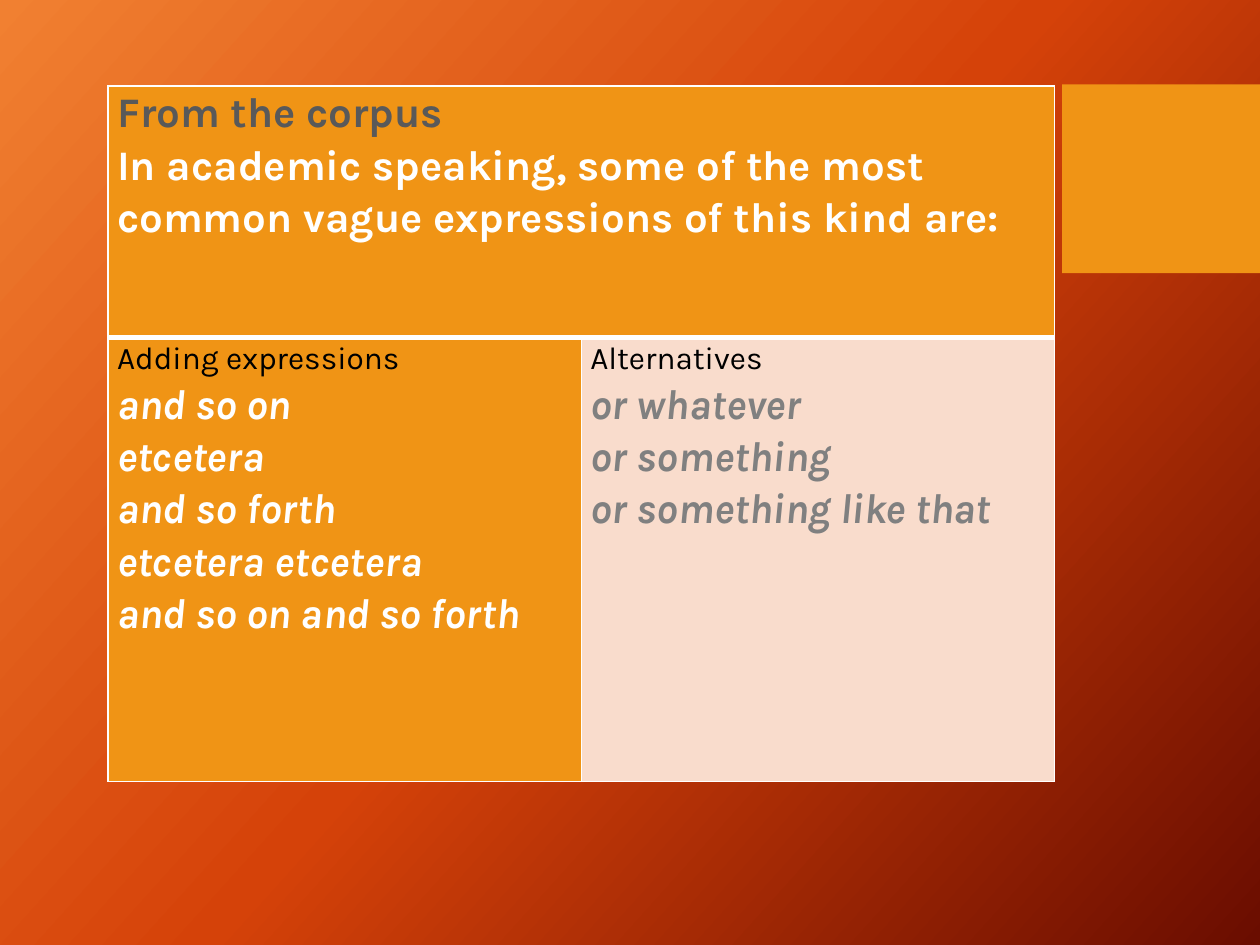
import copy
from dataclasses import dataclass

import pptx
import pptx.dml.color
import pptx.enum.shapes
import pptx.oxml
import pptx.oxml.ns
import pptx.slide
import pptx.table
import pptx.util
from pptx.util import Cm

COLORS = {
    "amber": "F09415",
    "peach": "F9DCCC",
    "white": "FFFFFF",
    "black": "000000",
    "heading": "595959",
    "muted": "808080",
}
GRADIENT = [(0, "F18031"), (0.5, "D54209"), (1, "6A0D00")]
FONT = "Karla"
THIN, THICK = 1, 3


@dataclass
class Line:
    text: str
    color: str
    size: int = 24
    bold: bool = True
    italic: bool = False


@dataclass
class Panel:
    row: int
    column: int
    fill: str
    lines: list[Line]


def expressions(label: str, color: str, phrases: list[str]) -> list[Line]:
    """A plain label followed by its example phrases."""
    examples = [Line(phrase, color, italic=True) for phrase in phrases]
    return [Line(label, "black", size=18, bold=False)] + examples


PANELS = [
    Panel(0, 0, "amber", [
        Line("From the corpus", "heading"),
        Line("In academic speaking, some of the most common vague "
             "expressions of this kind are:", "white"),
    ]),
    Panel(1, 0, "amber", expressions("Adding expressions", "white", [
        "and so on", "etcetera", "and so forth", "etcetera etcetera",
        "and so on and so forth"])),
    Panel(1, 1, "peach", expressions("Alternatives", "muted", [
        "or whatever", "or something", "or something like that"])),
]


def rgb(value: str) -> pptx.dml.color.RGBColor:
    return pptx.dml.color.RGBColor.from_string(value)


def paint_background(page: pptx.slide.Slide) -> None:
    fill = page.background.fill
    fill.gradient()
    fill.gradient_angle = 318
    stop_list = next(page.element.iter(pptx.oxml.ns.qn("a:gsLst")))
    stop_list.insert(1, copy.deepcopy(stop_list[0]))
    for stop, (position, color) in zip(fill.gradient_stops, GRADIENT):
        stop.position = position
        stop.color.rgb = rgb(color)


def add_accent_block(page: pptx.slide.Slide) -> None:
    block = page.shapes.add_shape(
        pptx.enum.shapes.MSO_SHAPE.RECTANGLE,
        Cm(21.41), Cm(1.7), Cm(3.99), Cm(3.81))
    block.shadow.inherit = False
    block.fill.solid()
    block.fill.fore_color.rgb = rgb(COLORS["amber"])
    block.line.fill.background()


def set_borders(cell: pptx.table._Cell, top: int, bottom: int) -> None:
    widths = {"lnL": THIN, "lnR": THIN, "lnT": top, "lnB": bottom}
    properties = cell._tc.get_or_add_tcPr()
    for index, (side, width) in enumerate(widths.items()):
        properties.insert(index, pptx.oxml.parse_xml(
            f'<a:{side} {pptx.oxml.ns.nsdecls("a")} w="{pptx.util.Pt(width)}">'
            f'<a:solidFill><a:srgbClr val="{COLORS["white"]}"/></a:solidFill>'
            f'</a:{side}>'))


def write_lines(cell: pptx.table._Cell, lines: list[Line]) -> None:
    cell.margin_left = cell.margin_right = Cm(0.18)
    cell.margin_top = cell.margin_bottom = 0
    frame = cell.text_frame
    for index, line in enumerate(lines):
        para = frame.add_paragraph() if index else frame.paragraphs[0]
        para.line_spacing = 1.07
        span = para.add_run()
        span.text = line.text
        span.font.name = FONT
        span.font.size = pptx.util.Pt(line.size)
        span.font.bold = line.bold
        span.font.italic = line.italic
        span.font.color.rgb = rgb(COLORS[line.color])


def add_corpus_table(page: pptx.slide.Slide) -> None:
    table = page.shapes.add_table(
        2, 2, Cm(2.18), Cm(1.73), Cm(19.08), Cm(14.02)).table
    table.first_row = table.horz_banding = False
    table.rows[0].height, table.rows[1].height = Cm(5.08), Cm(8.94)
    table.cell(0, 0).merge(table.cell(0, 1))
    for panel in PANELS:
        cell = table.cell(panel.row, panel.column)
        cell.fill.solid()
        cell.fill.fore_color.rgb = rgb(COLORS[panel.fill])
        write_lines(cell, panel.lines)
    for cell in table.iter_cells():
        is_header = cell.is_merge_origin or cell.is_spanned
        set_borders(cell, THIN if is_header else THICK,
                    THICK if is_header else THIN)


def main() -> None:
    deck = pptx.Presentation()
    deck.slide_width, deck.slide_height = Cm(25.4), Cm(19.05)
    page = deck.slides.add_slide(deck.slide_layouts[6])
    paint_background(page)
    add_accent_block(page)
    add_corpus_table(page)
    deck.save("out.pptx")


if __name__ == "__main__":
    main()
